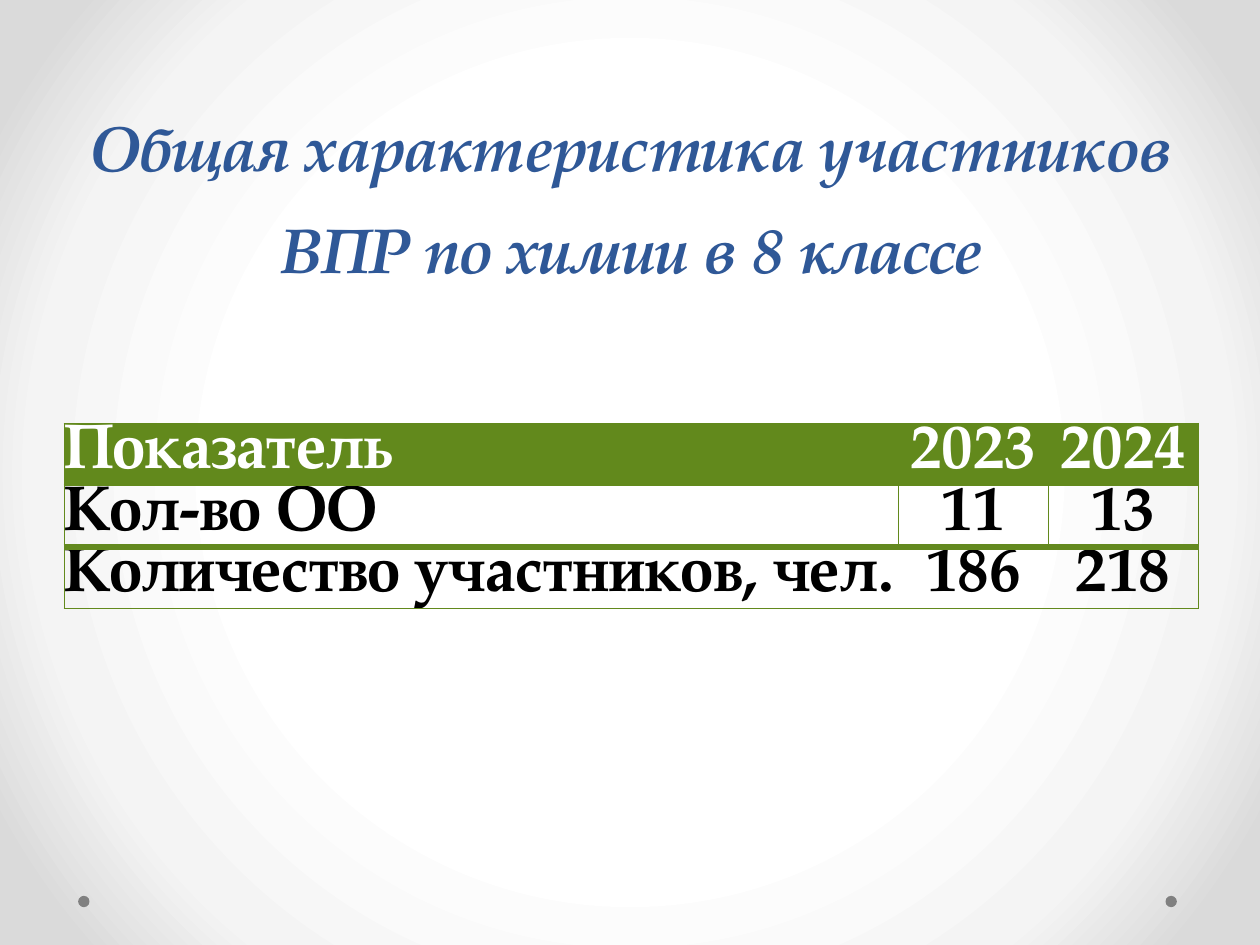
from lxml import etree
from pptx import Presentation
from pptx.dml.color import RGBColor
from pptx.enum.shapes import MSO_SHAPE as Shape
from pptx.enum.text import MSO_ANCHOR as Anchor, PP_ALIGN as Align
from pptx.oxml import parse_xml
from pptx.oxml.ns import nsdecls, qn
from pptx.util import Inches, Pt

FONT = "TeX Gyre Pagella"
BLUE = RGBColor(0x2F, 0x58, 0x97)
GREEN = RGBColor(0x62, 0x89, 0x1C)
RULE_GREEN = RGBColor(0x63, 0x89, 0x1F)
GRAY = RGBColor(0x80, 0x80, 0x80)
WHITE = RGBColor(0xFF, 0xFF, 0xFF)
BLACK = RGBColor(0, 0, 0)
BACKDROP_STOPS = [
    (50, WHITE),
    (76, RGBColor(0xF4, 0xF4, 0xF4)),
    (92, RGBColor(0xDA, 0xDA, 0xDA)),
]
PLAIN_TABLE_STYLE = "{2D5ABB26-0587-4C30-8999-92F81FD0307C}"

PARTICIPANTS = [
    ("Показатель", "2023", "2024"),
    ("Кол-во ОО", "11", "13"),
    ("Количество участников, чел.", "186", "218"),
]
COLUMN_WIDTHS = [6.62, 1.19, 1.19]
THIN, THICK = (GREEN, 0.75), (RULE_GREEN, 4)


def set_backdrop(slide):
    stops = "".join(
        f'<a:gs pos="{pos * 1000}"><a:srgbClr val="{color}"/></a:gs>'
        for pos, color in BACKDROP_STOPS
    )
    backdrop = parse_xml(
        f'<p:bg {nsdecls("p", "a")}><p:bgPr><a:gradFill rotWithShape="1">'
        f'<a:gsLst>{stops}</a:gsLst><a:path path="circle">'
        '<a:fillToRect l="50000" t="50000" r="50000" b="50000"/></a:path>'
        '</a:gradFill><a:effectLst/></p:bgPr></p:bg>'
    )
    slide.shapes._spTree.getparent().insert(0, backdrop)


def add_corner_dots(slide, lefts, top, size):
    for left in lefts:
        dot = slide.shapes.add_shape(
            Shape.OVAL, Inches(left), Inches(top), Inches(size), Inches(size)
        )
        dot.shadow.inherit = False
        dot.fill.solid()
        dot.fill.fore_color.rgb = GRAY
        dot.line.fill.background()


def style_paragraph(paragraph, color, align):
    paragraph.alignment = align
    font = paragraph.font
    font.name, font.size, font.bold = FONT, Pt(36), True
    font.color.rgb = color


def place_title(slide, left, top, width, height):
    title = slide.shapes.title
    title.left, title.top = Inches(left), Inches(top)
    title.width, title.height = Inches(width), Inches(height)
    frame = title.text_frame
    frame.word_wrap = True
    frame.vertical_anchor = Anchor.BOTTOM
    frame.text = "Общая характеристика участников ВПР по химии в 8 классе"
    heading = frame.paragraphs[0]
    style_paragraph(heading, BLUE, Align.CENTER)
    heading.font.italic = True
    heading.line_spacing = Pt(58)


def set_borders(cell, borders):
    properties = cell._tc.get_or_add_tcPr()
    for index, side in enumerate("LRTB"):
        line = etree.Element(qn(f"a:ln{side}"))
        if side in borders:
            color, width = borders[side]
            line.set("w", str(Pt(width)))
            fill = etree.SubElement(line, qn("a:solidFill"))
            etree.SubElement(fill, qn("a:srgbClr")).set("val", str(color))
        else:
            etree.SubElement(line, qn("a:noFill"))
        properties.insert(index, line)


def cell_borders(row, column):
    last_row, last_column = len(PARTICIPANTS) - 1, len(COLUMN_WIDTHS) - 1
    borders = {
        "T": THICK if row == last_row else THIN,
        "B": THICK if row == last_row - 1 else THIN,
    }
    if column == 0 or row == 1:
        borders["L"] = THIN
    if column == last_column or row == 1:
        borders["R"] = THIN
    return borders


def fill_cell(cell, text, row, column):
    cell.margin_left = cell.margin_right = 0
    cell.margin_top = cell.margin_bottom = 0
    cell.text = text
    paragraph = cell.text_frame.paragraphs[0]
    style_paragraph(
        paragraph, WHITE if row == 0 else BLACK, Align.CENTER if column else Align.LEFT
    )
    paragraph.line_spacing = Pt(35)
    if row == 0:
        cell.fill.solid()
        cell.fill.fore_color.rgb = GREEN
    else:
        cell.fill.background()
    set_borders(cell, cell_borders(row, column))


def add_participants_table(slide, left, top, width, height):
    frame = slide.shapes.add_table(
        len(PARTICIPANTS), len(COLUMN_WIDTHS),
        Inches(left), Inches(top), Inches(width), Inches(height),
    )
    table = frame.table
    table._tbl.tblPr.find(qn("a:tableStyleId")).text = PLAIN_TABLE_STYLE
    for column, column_width in zip(table.columns, COLUMN_WIDTHS):
        column.width = Inches(column_width)
    for row, values in enumerate(PARTICIPANTS):
        for column, text in enumerate(values):
            fill_cell(table.cell(row, column), text, row, column)


def main():
    deck = Presentation()
    deck.slide_width, deck.slide_height = Inches(10), Inches(7.5)
    slide = deck.slides.add_slide(deck.slide_layouts[5])
    set_backdrop(slide)
    add_corner_dots(slide, [9.25, 0.62], 7.11, 0.09)
    place_title(slide, 0.51, 1.07, 9, 1.25)
    add_participants_table(slide, 0.51, 3.36, 9, 1.47)
    deck.save("out.pptx")


if __name__ == "__main__":
    main()
